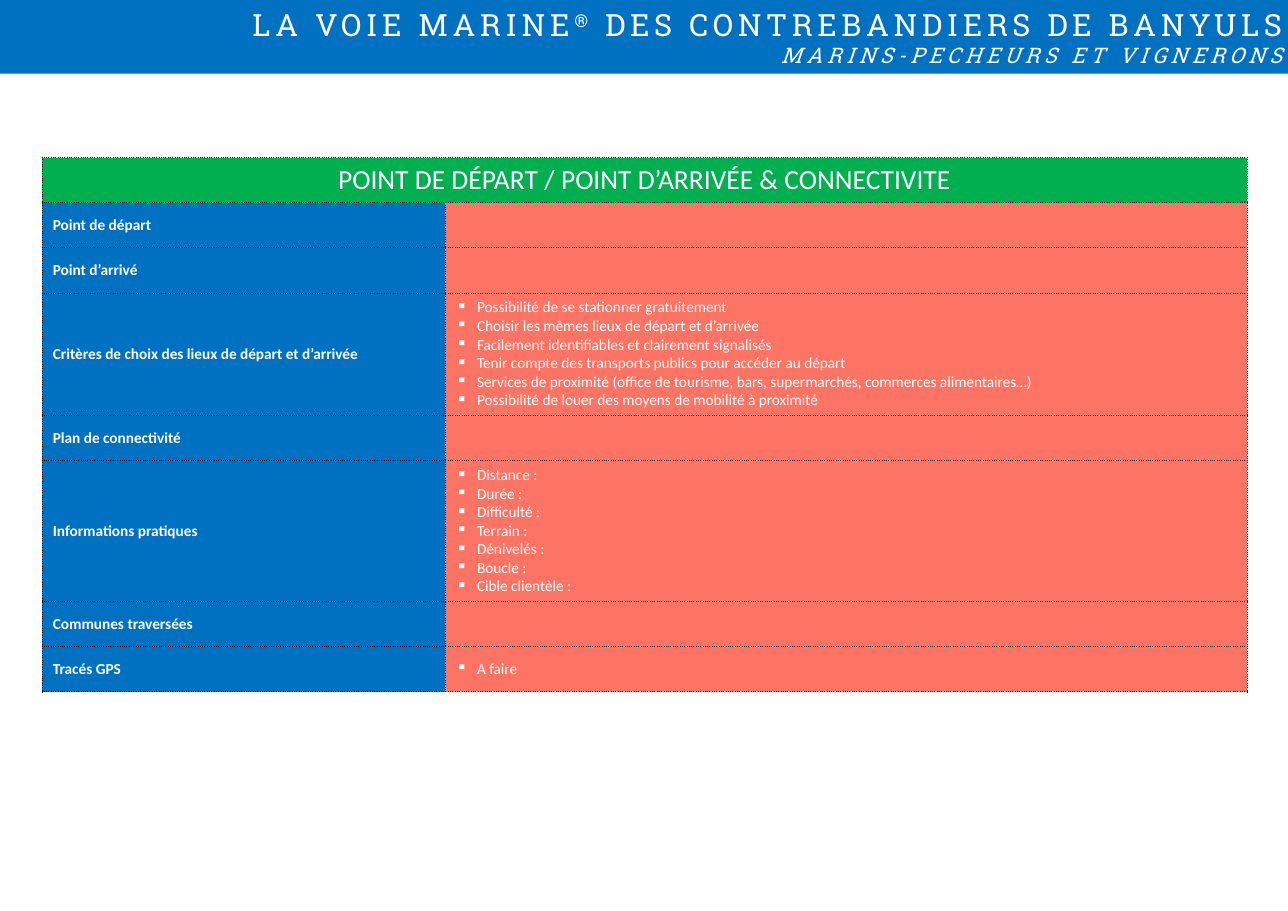
"""Build the slide with the practical details of a hiking route."""
from lxml import etree
from pptx import Presentation
from pptx.dml.color import RGBColor
from pptx.enum.shapes import MSO_SHAPE
from pptx.enum.text import MSO_ANCHOR, PP_ALIGN
from pptx.oxml.ns import qn
from pptx.util import Inches, Pt

RECTANGLE = MSO_SHAPE.RECTANGLE
MIDDLE = MSO_ANCHOR.MIDDLE
CENTER, RIGHT = PP_ALIGN.CENTER, PP_ALIGN.RIGHT

COLORS = {"blue": "0070C0", "green": "00B050", "coral": "FE7464", "white": "FFFFFF", "border": "000000"}
SLIDE_WIDTH, SLIDE_HEIGHT = 11.69, 8.27
COLUMN_WIDTHS = [3.66, 7.28]
ROW_HEIGHT = 0.41
BULLET_INDENT = Inches(0.19)

TABLE_TITLE = "POINT DE DÉPART / POINT D’ARRIVÉE & CONNECTIVITE"
ROWS = [
    ("Point de départ", ROW_HEIGHT, []),
    ("Point d’arrivé", ROW_HEIGHT, []),
    ("Critères de choix des lieux de départ et d’arrivée", 1.11, [
        "Possibilité de se stationner gratuitement",
        "Choisir les mêmes lieux de départ et d’arrivée",
        "Facilement identifiables et clairement signalisés",
        "Tenir compte des transports publics pour accéder au départ",
        "Services de proximité (office de tourisme, bars, supermarchés, commerces alimentaires…)",
        "Possibilité de louer des moyens de mobilité à proximité",
    ]),
    ("Plan de connectivité", ROW_HEIGHT, []),
    ("Informations pratiques", 1.28, [
        "Distance :", "Durée :", "Difficulté :", "Terrain :",
        "Dénivelés :", "Boucle :", "Cible clientèle :",
    ]),
    ("Communes traversées", ROW_HEIGHT, []),
    ("Tracés GPS", ROW_HEIGHT, ["A faire"]),
]
BANNER_LINES = [
    ([("LA VOIE MARINE", 0), ("®", 30000), (" DES CONTREBANDIERS DE BANYULS", 0)], 20, False),
    ([("MARINS-PECHEURS ET VIGNERONS", 0)], 14, True),
]


def format_font(font, size, name="Calibri", bold=False, italic=False):
    font.size = Pt(size)
    font.name = name
    font.bold = bold
    font.italic = italic
    font.color.rgb = RGBColor.from_string(COLORS["white"])


def style_cell(cell, color):
    properties = cell._tc.get_or_add_tcPr()
    for side in ("a:lnL", "a:lnR", "a:lnT", "a:lnB"):
        line = etree.SubElement(properties, qn(side), w=str(Pt(0.5)))
        fill = etree.SubElement(line, qn("a:solidFill"))
        etree.SubElement(fill, qn("a:srgbClr"), val=COLORS["border"])
        etree.SubElement(line, qn("a:prstDash"), val="dot")
    cell.fill.solid()
    cell.fill.fore_color.rgb = RGBColor.from_string(COLORS[color])
    cell.vertical_anchor = MIDDLE


presentation = Presentation()
presentation.slide_width = Inches(SLIDE_WIDTH)
presentation.slide_height = Inches(SLIDE_HEIGHT)
slide = presentation.slides.add_slide(presentation.slide_layouts[6])

table = slide.shapes.add_table(
    len(ROWS) + 1, 2, Inches(0.38), Inches(1.43), Inches(sum(COLUMN_WIDTHS)), Inches(4.8)
).table
table.first_row = False
table.horz_banding = False
for column, width in zip(table.columns, COLUMN_WIDTHS):
    column.width = Inches(width)

table.rows[0].height = Inches(ROW_HEIGHT)
title_cell = table.cell(0, 0)
title_cell.merge(table.cell(0, 1))
for cell in table.rows[0].cells:
    style_cell(cell, "green")
title_cell.text_frame.text = TABLE_TITLE
title_paragraph = title_cell.text_frame.paragraphs[0]
title_paragraph.alignment = CENTER
format_font(title_paragraph.runs[0].font, 18)

for row_index, (label, height, details) in enumerate(ROWS, start=1):
    table.rows[row_index].height = Inches(height)
    label_cell, detail_cell = table.cell(row_index, 0), table.cell(row_index, 1)
    style_cell(label_cell, "blue")
    style_cell(detail_cell, "coral")
    label_cell.text_frame.text = label
    format_font(label_cell.text_frame.paragraphs[0].runs[0].font, 10, bold=True)
    detail_cell.text_frame.text = "\n".join(details)
    for paragraph in detail_cell.text_frame.paragraphs:
        format_font(paragraph.font, 10)
        for run in paragraph.runs:
            format_font(run.font, 10)
            properties = paragraph._p.get_or_add_pPr()
            properties.set("marL", str(BULLET_INDENT))
            properties.set("indent", str(-BULLET_INDENT))
            bullet = etree.Element(qn("a:buChar"), char="▪")
            properties.insert(0, bullet)

banner = slide.shapes.add_shape(RECTANGLE, 0, 0, Inches(SLIDE_WIDTH), Inches(0.67))
banner.shadow.inherit = False
banner.fill.solid()
banner.fill.fore_color.rgb = RGBColor.from_string(COLORS["blue"])
banner.line.fill.background()
banner_frame = banner.text_frame
banner_frame.word_wrap = True
banner_frame.vertical_anchor = MIDDLE
banner_frame.margin_left = banner_frame.margin_right = Inches(0.05)
banner_frame.margin_top = banner_frame.margin_bottom = Inches(0.02)
banner_frame.text = "\n".join("".join(text for text, _ in parts) for parts, _, _ in BANNER_LINES)
for paragraph, (parts, size, italic) in zip(banner_frame.paragraphs, BANNER_LINES):
    paragraph.alignment = RIGHT
    paragraph.runs[0].text = parts[0][0]
    for text, _ in parts[1:]:
        paragraph.add_run().text = text
    for run, (_, baseline) in zip(paragraph.runs, parts):
        format_font(run.font, size, "Roboto Slab", italic=italic)
        properties = run._r.get_or_add_rPr()
        properties.set("spc", "300")
        properties.set("baseline", str(baseline))

presentation.save("out.pptx")
